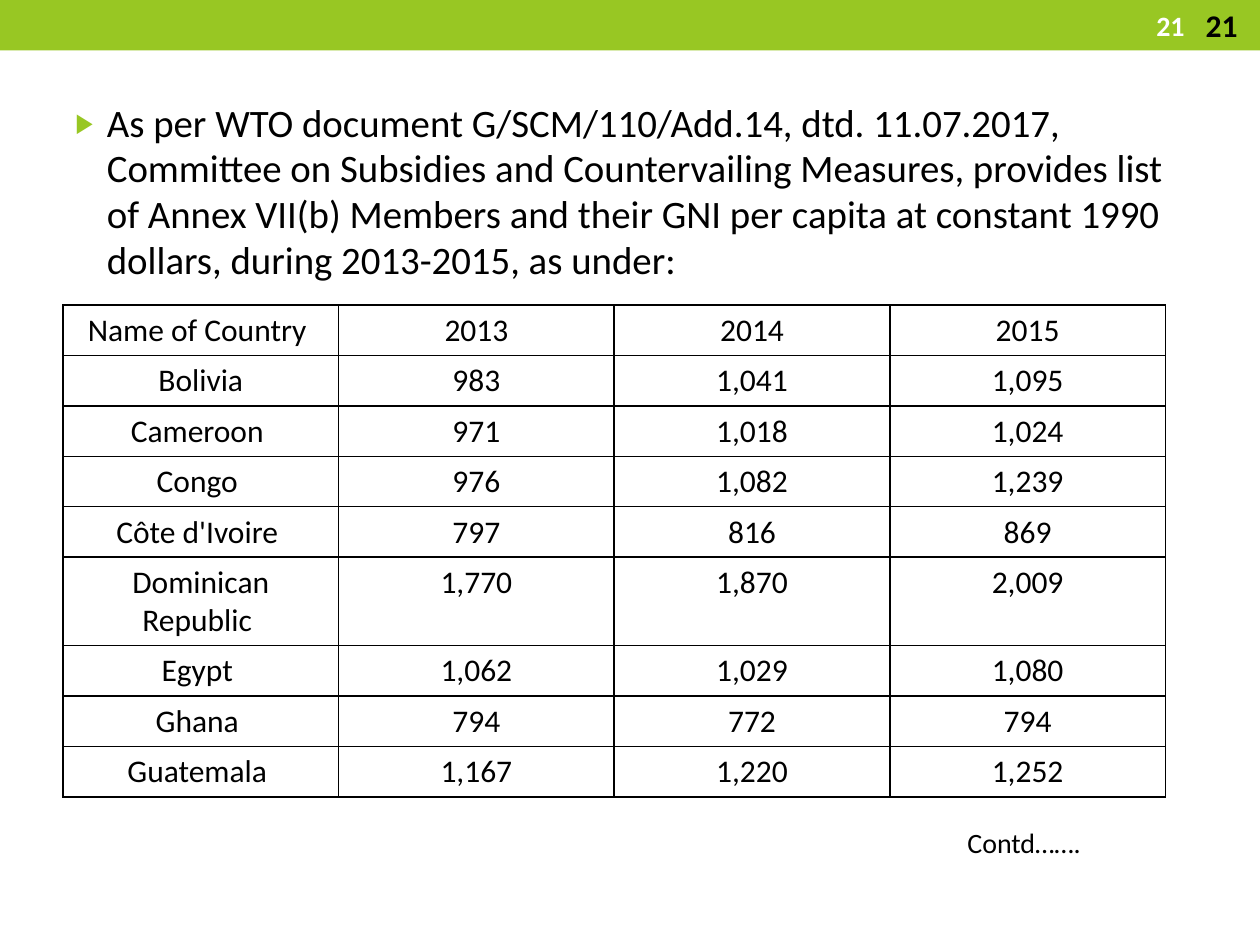
from lxml import etree
from pptx import Presentation
from pptx.dml.color import RGBColor
from pptx.enum.shapes import MSO_SHAPE
from pptx.enum.text import MSO_ANCHOR as Anchor, MSO_AUTO_SIZE as AutoSize, PP_ALIGN as Align
from pptx.oxml.ns import qn
from pptx.util import Inches, Pt

COLORS = {"green": "98C723", "black": "000000", "white": "FFFFFF"}
FONT = "Calibri"

INTRO = (
    "As per WTO document G/SCM/110/Add.14, dtd. 11.07.2017, "
    "Committee on Subsidies and Countervailing Measures, provides list "
    "of Annex VII(b) Members and their GNI per capita at constant 1990 "
    "dollars, during 2013-2015, as under:"
)
GNI_ROWS = [
    ("Name of Country ", "2013", "2014", "2015"),
    ("Bolivia", "983", "1,041", "1,095"),
    ("Cameroon ", "971", "1,018", "1,024"),
    ("Congo ", "976", "1,082", "1,239"),
    ("Côte d'Ivoire ", "797", "816", "869"),
    ("Dominican Republic ", "1,770", "1,870", "2,009"),
    ("Egypt ", "1,062", "1,029", "1,080"),
    ("Ghana ", "794", "772", "794"),
    ("Guatemala ", "1,167", "1,220", "1,252"),
]


class SlideBuilder:
    def __init__(self, slide):
        self.slide = slide

    def rgb(self, color):
        return RGBColor.from_string(COLORS[color])

    def styled_run(self, paragraph, text, size, color="black", bold=False, align=Align.LEFT):
        paragraph.alignment = align
        run = paragraph.add_run()
        run.text = text
        for name, value in {"name": FONT, "size": Pt(size), "bold": bold}.items():
            setattr(run.font, name, value)
        run.font.color.rgb = self.rgb(color)

    def bar(self, left, top, width, height, color):
        bar = self.slide.shapes.add_shape(
            MSO_SHAPE.RECTANGLE, *map(Inches, (left, top, width, height)))
        bar.shadow.inherit = False
        bar.fill.solid()
        bar.fill.fore_color.rgb = self.rgb(color)
        bar.line.fill.background()

    def text(self, box, text, size, frame=None, **style):
        """Add a text box; frame overrides text frame settings. Return its paragraph."""
        text_frame = self.slide.shapes.add_textbox(*map(Inches, box)).text_frame
        settings = {"word_wrap": True, "vertical_anchor": Anchor.TOP, **(frame or {})}
        for name, value in settings.items():
            setattr(text_frame, name, value)
        paragraph = text_frame.paragraphs[0]
        self.styled_run(paragraph, text, size, **style)
        return paragraph

    def bullet(self, paragraph, symbol, color, percent, indent):
        properties = paragraph._p.get_or_add_pPr()
        properties.set("marL", str(Inches(indent)))
        properties.set("indent", str(-Inches(indent)))
        bullet_color = etree.SubElement(properties, qn("a:buClr"))
        etree.SubElement(bullet_color, qn("a:srgbClr"), val=COLORS[color])
        etree.SubElement(properties, qn("a:buSzPct"), val=str(percent * 1000))
        etree.SubElement(properties, qn("a:buFont"), typeface="Arial")
        etree.SubElement(properties, qn("a:buChar"), char=symbol)

    def cell_borders(self, cell, color, width):
        properties = cell._tc.get_or_add_tcPr()
        for position, side in enumerate(("lnL", "lnR", "lnT", "lnB")):
            line = etree.Element(qn(f"a:{side}"), w=str(Pt(width)))
            fill = etree.SubElement(line, qn("a:solidFill"))
            etree.SubElement(fill, qn("a:srgbClr"), val=COLORS[color])
            properties.insert(position, line)

    def table(self, left, top, width, row_height, rows, size):
        table = self.slide.shapes.add_table(
            len(rows), len(rows[0]), Inches(left), Inches(top),
            Inches(width), Inches(row_height * len(rows))).table
        for flag in ("first_row", "horz_banding"):
            setattr(table, flag, False)
        for row_index, row in enumerate(rows):
            for column_index, value in enumerate(row):
                cell = table.cell(row_index, column_index)
                cell.fill.background()
                self.cell_borders(cell, "black", 1)
                self.styled_run(cell.text_frame.paragraphs[0], value, size, align=Align.CENTER)


def main():
    presentation = Presentation()
    presentation.slide_width, presentation.slide_height = Inches(10), Inches(7.5)
    builder = SlideBuilder(presentation.slides.add_slide(presentation.slide_layouts[6]))

    builder.bar(0, 0, 10, 0.4, "green")
    intro = builder.text((0.5, 0.75, 9, 1.5), INTRO, 22.2)
    intro.space_before = Pt(0.5)
    intro.line_spacing = 0.98
    builder.bullet(intro, "▶", "green", 70, 0.25)
    builder.text((8.33, 0.02, 1.17, 0.36), "21", 16, {"vertical_anchor": Anchor.MIDDLE},
                 color="white", bold=True, align=Align.RIGHT)
    builder.table(0.5, 2.42, 8.75, 0.4, GNI_ROWS, 18)
    builder.text((7.58, 6.5, 1.11, 0.37), "Contd…….", 16,
                 {"word_wrap": False, "auto_size": AutoSize.SHAPE_TO_FIT_TEXT})
    builder.text((9.1, 0, 0.82, 0.4), "21", 18, {"vertical_anchor": Anchor.BOTTOM},
                 bold=True, align=Align.RIGHT)

    presentation.save("out.pptx")


if __name__ == "__main__":
    main()
